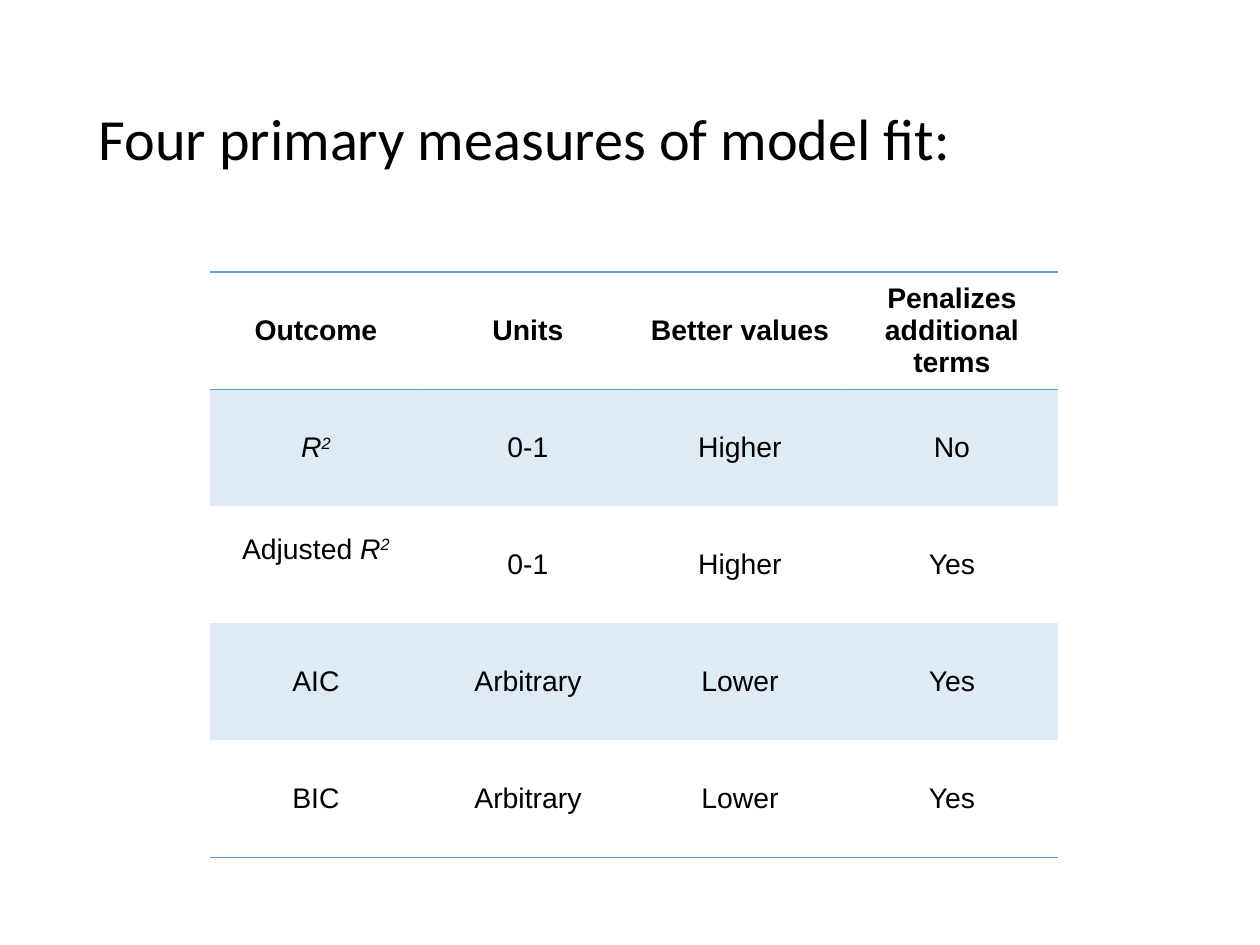
import lxml.etree
import pptx
import pptx.dml.color
import pptx.enum.text
import pptx.oxml.ns
import pptx.util

Pt = pptx.util.Pt
qn = pptx.oxml.ns.qn
BLACK, BLUE = "000000", "5B9BD5"


def rgb(color):
    return pptx.dml.color.RGBColor.from_string(color)


def add_text(p, text, size=18, font="Arial", color=BLACK, bold=False, italic=False, baseline=0):
    r = p.add_run()
    r.text = text
    r.font.size = Pt(size)
    r.font.name = font
    r.font.bold = bold
    r.font.italic = italic
    r.font.color.rgb = rgb(color)
    if baseline:
        r.font._element.set("baseline", str(baseline * 1000))


prs = pptx.Presentation()
prs.slide_width, prs.slide_height = Pt(800), Pt(600)
s = prs.slides.add_slide(prs.slide_layouts[6])

title = s.shapes.add_textbox(Pt(54.7), Pt(31.7), Pt(690), Pt(116))
tf = title.text_frame
tf.word_wrap = True
tf.vertical_anchor = pptx.enum.text.MSO_ANCHOR.MIDDLE
tf.margin_left = tf.margin_right = tf.margin_top = tf.margin_bottom = Pt(8)
p = tf.paragraphs[0]
p.line_spacing = 0.9
add_text(p, "Four primary measures of model fit:", size=37, font="Calibri")

R_SQUARED = [("R", {"italic": True}), ("2", {"italic": True, "baseline": 30})]
rows = [
    ["Outcome", "Units", "Better values", "Penalizes additional terms"],
    [R_SQUARED, "0-1", "Higher", "No"],
    [[("Adjusted ", {})] + R_SQUARED, "0-1", "Higher", "Yes"],
    ["AIC", "Arbitrary", "Lower", "Yes"],
    ["BIC", "Arbitrary", "Lower", "Yes"],
]
row_borders = {0: ["a:lnT", "a:lnB"], 4: ["a:lnB"]}

frame = s.shapes.add_table(5, 4, Pt(133.3), Pt(172.8), Pt(538.4), Pt(371.5))
table = frame.table
table.first_row = table.horz_banding = False
NO_STYLE_NO_GRID = "{2D5ABB26-0587-4C30-8999-92F81FD0307C}"
table._tbl.tblPr.find(qn("a:tableStyleId")).text = NO_STYLE_NO_GRID
for column in table.columns:
    column.width = Pt(134.6)

for i, row in enumerate(rows):
    table.rows[i].height = Pt(74.3)
    for j, content in enumerate(row):
        cell = table.cell(i, j)
        cell.vertical_anchor = pptx.enum.text.MSO_ANCHOR.MIDDLE
        tcPr = cell._tc.get_or_add_tcPr()
        for side in row_borders.get(i, []):
            ln = lxml.etree.SubElement(tcPr, qn(side), w=str(Pt(1)))
            line_fill = lxml.etree.SubElement(ln, qn("a:solidFill"))
            lxml.etree.SubElement(line_fill, qn("a:srgbClr"), val=BLUE)
        if i % 2:
            cell.fill.solid()
            cell.fill.fore_color.rgb = rgb(BLUE)
            clr = tcPr.find(qn("a:solidFill")).find(qn("a:srgbClr"))
            lxml.etree.SubElement(clr, qn("a:alpha"), val="20000")
        else:
            cell.fill.background()
        p = cell.text_frame.paragraphs[0]
        p.alignment = pptx.enum.text.PP_ALIGN.CENTER
        runs = [(content, {"bold": i == 0})] if isinstance(content, str) else content
        for text, style in runs:
            add_text(p, text, **style)

table.cell(2, 0).margin_bottom = Pt(23.3)

prs.save("out.pptx")
